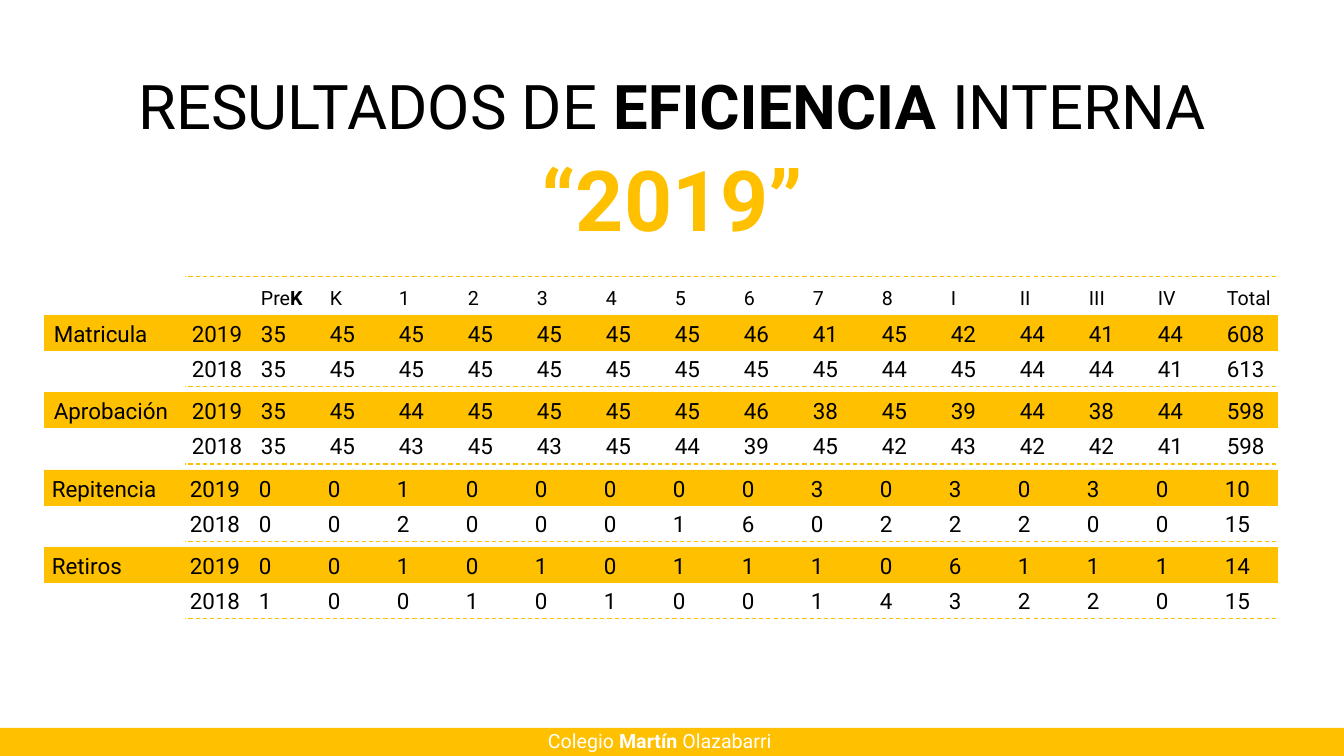
from lxml.etree import SubElement as Sub
from pptx import Presentation
from pptx.dml.color import RGBColor as Rgb
from pptx.enum.dml import MSO_LINE as Dash
from pptx.enum.shapes import MSO_CONNECTOR as Conn, MSO_SHAPE as Shape
from pptx.enum.text import MSO_ANCHOR as Anchor, PP_ALIGN as Align
from pptx.oxml.ns import qn
from pptx.util import Inches, Pt

COLORS = {"gold": "FFC000", "black": "000000", "white": "FFFFFF"}
FONT = "Roboto"
TAB = 69   # column pitch
LAST = 17  # stop of the Total column

HEAD = ["\t\t\tPre", "K", "\tK\t1\t2\t3\t4\t5\t6\t7\t8\tI\tII\tIII\tIV\tTotal"]
# label, text left, values for 2019, values for 2018
GROUPS = [
    ("Matricula", 44, "35 45 45 45 45 45 45 46 41 45 42 44 41 44 608",
     "35 45 45 45 45 45 45 45 45 44 45 44 44 41 613"),
    ("Aprobación", 44, "35 45 44 45 45 45 45 46 38 45 39 44 38 44 598",
     "35 45 43 45 43 45 44 39 45 42 43 42 42 41 598"),
    ("Repitencia", 42, "0 0 1 0 0 0 0 0 3 0 3 0 3 0 10",
     "0 0 2 0 0 0 1 6 0 2 2 2 0 0 15"),
    ("Retiros", 42, "0 0 1 0 1 0 1 1 1 0 6 1 1 1 14",
     "1 0 0 1 0 1 0 0 1 4 3 2 2 0 15"),
]


def px(n):
    return round(n * Inches(1) / 100.8)


def color(name):
    return Rgb.from_string(COLORS[name])


def add_text(shapes, box, parts, size, tint, align=None):
    """Write parts in turn plain and bold; return the frame."""
    frame = shapes.add_textbox(*map(px, box)).text_frame
    frame.word_wrap = True
    para = frame.paragraphs[0]
    para.line_spacing = 0.9
    if align is not None:
        para.alignment = align
    for i, part in enumerate(parts):
        if not part:
            continue
        run = para.add_run()
        run.text = part
        font = run.font
        font.name, font.size, font.bold = FONT, Pt(size), i % 2 == 1
        font.color.rgb = color(tint)
    return frame


def add_band(shapes, box):
    band = shapes.add_shape(Shape.RECTANGLE, *map(px, box))
    band.shadow.inherit = False
    band.fill.solid()
    band.fill.fore_color.rgb = color("gold")
    band.line.fill.background()


def add_rule(shapes, y):
    rule = shapes.add_connector(Conn.STRAIGHT, px(1276), px(y), px(185), px(y))
    rule.line.color.rgb = color("gold")
    rule.line.width = Pt(0.75)
    rule.line.dash_style = Dash.DASH
    Sub(rule._element.spPr, qn("a:effectLst"))


def add_row(shapes, x, y, parts, size=16):
    frame = add_text(shapes, (x, y, 1245, 35), parts, size, "black")
    frame.vertical_anchor = Anchor.BOTTOM
    para = frame.paragraphs[0]
    para.line_spacing = Pt(31.8)
    # A label spans the first two columns
    first = 1 if parts[0].startswith("\t") else 2
    tabs = Sub(para._p.get_or_add_pPr(), qn("a:tabLst"))
    for i in range(first, LAST + 1):
        Sub(tabs, qn("a:tab"), pos=str(px(i * TAB)), algn="l")


def add_title(shapes, x, y, w):
    add_text(shapes, (x, y, w, 80),
             ["RESULTADOS DE ", "EFICIENCIA ", "INTERNA"], 44, "black", Align.CENTER)
    add_text(shapes, (x + 444, y + 83, 357, 80),
             ["", "“2019”"], 60, "gold", Align.CENTER)


def add_grid(shapes, x, y, w):
    for i, (label, left, now, past) in enumerate(GROUPS):
        top = y + i * 155 // 2
        # Highlighted current year
        part = shapes.add_group_shape().shapes
        add_band(part, (x, top, w, 36))
        add_row(part, left, top + 2, ["\t".join([label, "2019", *now.split()])])
        if i == 0:
            add_row(part, left, top - 36, HEAD, 14)
            add_rule(part, top - 38)
        # Previous year
        part = shapes.add_group_shape().shapes
        add_row(part, left, top + 37, ["\t\t" + "\t".join(["2018", *past.split()])])
        add_rule(part, top + 72)


def add_foot(shapes, y, w):
    add_band(shapes, (0, y, w, 28))
    add_text(shapes, (538, y - 1, 268, 35),
             ["Colegio ", "Martín ", "Olazabarri"], 14, "white")


def main():
    deck = Presentation()
    deck.slide_width, deck.slide_height = px(1344), px(756)
    shapes = deck.slides.add_slide(deck.slide_layouts[6]).shapes
    add_title(shapes, 50, 71, 1245)
    add_foot(shapes, 728, 1344)
    add_grid(shapes, 44, 315, 1234)
    deck.save("out.pptx")


if __name__ == "__main__":
    main()
